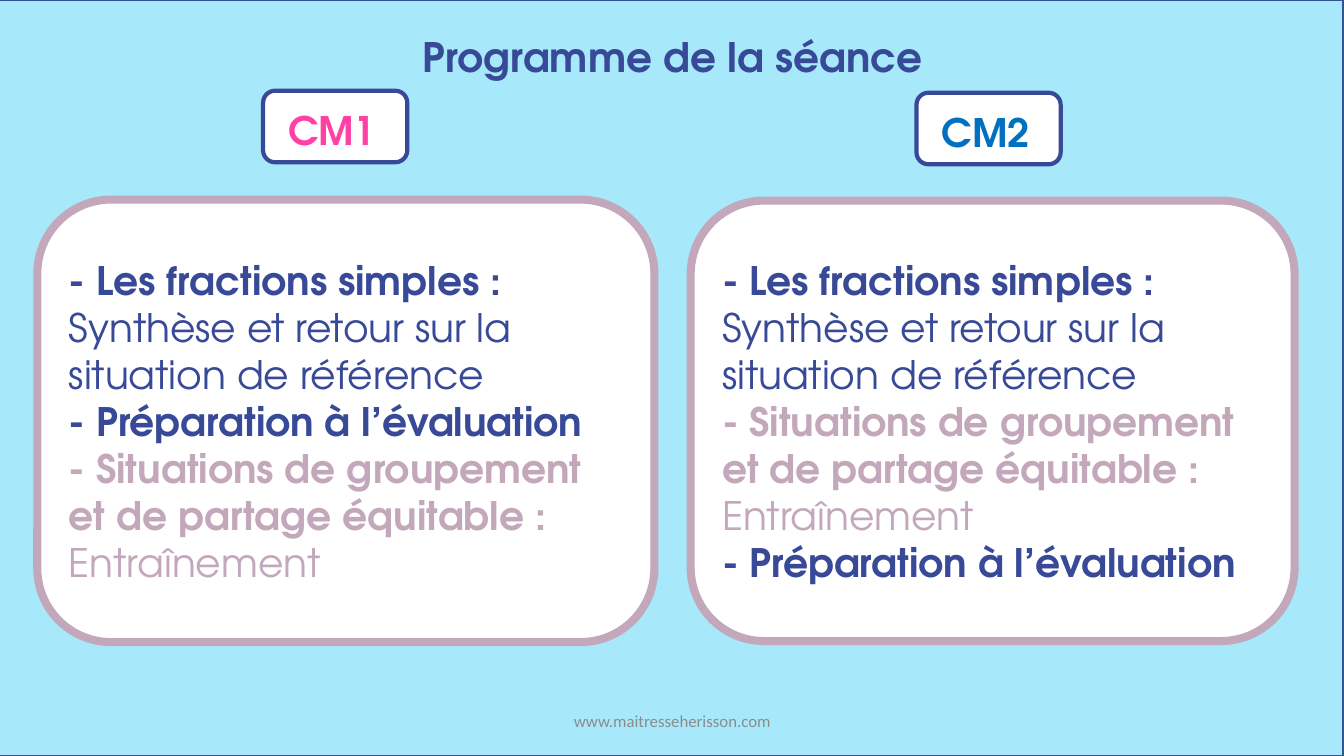
from pptx import Presentation
from pptx.dml.color import RGBColor
from pptx.enum.shapes import MSO_SHAPE as SHAPE
from pptx.enum.text import MSO_ANCHOR as ANCHOR, PP_ALIGN as ALIGN
from pptx.util import Inches, Pt

SKY = RGBColor(0xA7, 0xE8, 0xFB)
EDGE = RGBColor(0x32, 0x54, 0x91)
NAVY = RGBColor(0x37, 0x49, 0x97)
MAUVE = RGBColor(0xC3, 0xA7, 0xBA)
PINK = RGBColor(0xFF, 0x41, 0xA5)
BLUE = RGBColor(0x00, 0x70, 0xC0)
GREY = RGBColor(0x8C, 0x8C, 0x8C)
WHITE = RGBColor(0xFF, 0xFF, 0xFF)
TITLE_FONT = "TeX Gyre Adventor"

FRACTIONS = [("- Les fractions simples : ", NAVY, True),
             ("Synthèse et retour sur la situation de référence", NAVY, False)]
EVALUATION = [("- Préparation à l’évaluation", NAVY, True)]
SITUATIONS = [("- Situations de groupement et de partage équitable :", MAUVE, True)]
TRAINING = [("Entraînement", MAUVE, False)]

LEVELS = [
    ("CM1", PINK, (2.61, 0.9), (0.37, 1.98, 6.12, 4.39),
     [FRACTIONS, EVALUATION, SITUATIONS, TRAINING]),
    ("CM2", BLUE, (9.09, 0.92), (6.85, 1.99, 5.99, 4.37),
     [FRACTIONS, SITUATIONS, TRAINING, EVALUATION]),
]


def add_panel(s, kind, box, fill, line, width):
    sp = s.shapes.add_shape(kind, *map(Inches, box))
    sp.shadow.inherit = False
    sp.fill.solid()
    sp.fill.fore_color.rgb = fill
    sp.line.color.rgb = line
    sp.line.width = Pt(width)
    return sp


def write_run(p, text, color, **font):
    r = p.add_run()
    r.text = text
    r.font.color.rgb = color
    for name, value in font.items():
        setattr(r.font, name, value)


def add_label(s, box, text, color, align=ALIGN.LEFT, anchor=ANCHOR.TOP, **font):
    tf = s.shapes.add_textbox(*map(Inches, box)).text_frame
    tf.word_wrap = True
    tf.vertical_anchor = anchor
    p = tf.paragraphs[0]
    p.alignment = align
    write_run(p, text, color, **font)


def add_badge(s, corner, text, color):
    left, top = corner
    add_panel(s, SHAPE.ROUNDED_RECTANGLE, (left, top, 1.43, 0.71), WHITE, NAVY, 3)
    add_label(s, (left + 0.15, top + 0.11, 1.1, 0.57), text, color,
              name=TITLE_FONT, size=Pt(28), bold=True)


def add_programme(s, box, paragraphs):
    tf = add_panel(s, SHAPE.ROUNDED_RECTANGLE, box, WHITE, MAUVE, 5.75).text_frame
    tf.word_wrap = True
    tf.vertical_anchor = ANCHOR.MIDDLE
    for i, runs in enumerate(paragraphs):
        p = tf.add_paragraph() if i else tf.paragraphs[0]
        p.alignment = ALIGN.LEFT
        for text, color, bold in runs:
            write_run(p, text, color, name=TITLE_FONT, size=Pt(28), bold=bold)


def build_slide(prs):
    s = prs.slides.add_slide(prs.slide_layouts[6])
    add_panel(s, SHAPE.RECTANGLE, (-0.01, 0, 13.33, 7.5), SKY, EDGE, 1)
    add_label(s, (0.01, 0.27, 13.33, 0.59), "Programme de la séance", NAVY,
              ALIGN.CENTER, name=TITLE_FONT, size=Pt(29), bold=True)
    for level, color, corner, box, paragraphs in LEVELS:
        add_badge(s, corner, level, color)
        add_programme(s, box, paragraphs)
    add_label(s, (4.42, 6.95, 4.5, 0.4), "www.maitresseherisson.com", GREY,
              ALIGN.CENTER, ANCHOR.MIDDLE, name="Calibri", size=Pt(12))


def main():
    prs = Presentation()
    prs.slide_width, prs.slide_height = Inches(13.33), Inches(7.5)
    build_slide(prs)
    prs.save("out.pptx")


if __name__ == "__main__":
    main()
